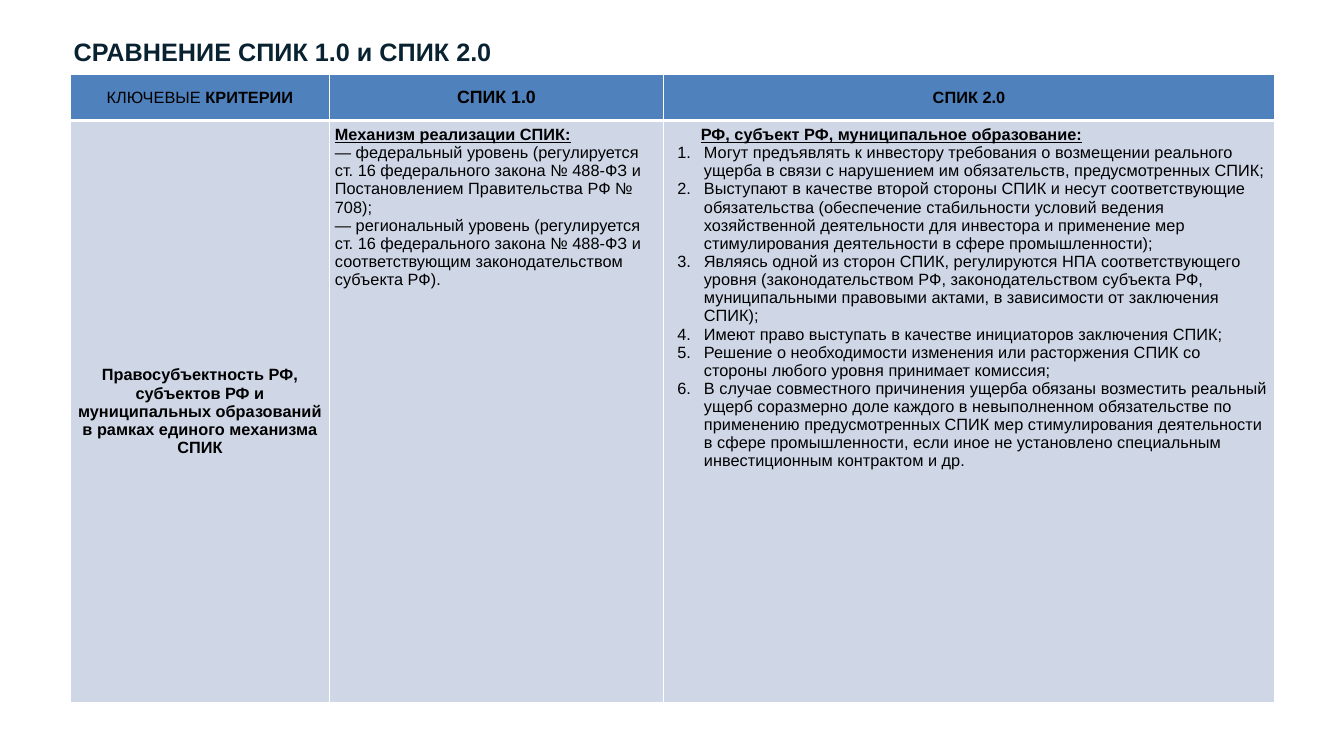
from lxml.etree import SubElement
from pptx import Presentation
from pptx.dml.color import RGBColor
from pptx.enum.text import MSO_ANCHOR as Anchor, MSO_AUTO_SIZE as AutoSize, PP_ALIGN as Align
from pptx.oxml.ns import qn
from pptx.util import Inches, Pt

WIDTH, HEIGHT = 12.6, 7.09
TABLE_LEFT, TABLE_TOP = 0.66, 0.7
COLUMNS = [2.43, 3.13, 5.73]
ROWS = [0.43, 5.46]
FONT = "Arial"
BLACK, WHITE, NAVY = "000000", "FFFFFF", "092231"
HEADER_BLUE, BODY_BLUE = "4F81BD", "CFD7E7"
THIN, THICK = 1, 3

TITLE = "СРАВНЕНИЕ СПИК 1.0 и СПИК 2.0"
CRITERION = ("Правосубъектность РФ, субъектов РФ и муниципальных образований "
             "в рамках единого механизма СПИК")
MECHANISM_HEADING = "Механизм реализации СПИК:"
MECHANISM_LEVELS = [
    "— федеральный уровень (регулируется ст. 16 федерального закона № 488-ФЗ и "
    "Постановлением Правительства РФ № 708);",
    "— региональный уровень (регулируется ст. 16 федерального закона № 488-ФЗ и "
    "соответствующим законодательством субъекта РФ).",
]
PARTIES_HEADING = "РФ, субъект РФ, муниципальное образование:"
PARTIES_RULES = [
    "Могут предъявлять к инвестору требования о возмещении реального ущерба в связи "
    "с нарушением им обязательств, предусмотренных СПИК;",
    "Выступают в качестве второй стороны СПИК и несут соответствующие обязательства "
    "(обеспечение стабильности условий ведения хозяйственной деятельности для инвестора "
    "и применение мер стимулирования деятельности в сфере промышленности);",
    "Являясь одной из сторон СПИК, регулируются НПА соответствующего уровня "
    "(законодательством РФ, законодательством субъекта РФ, муниципальными правовыми "
    "актами, в зависимости от заключения СПИК);",
    "Имеют право выступать в качестве инициаторов заключения СПИК;",
    "Решение о необходимости изменения или расторжения СПИК со стороны любого уровня "
    "принимает комиссия;",
    "В случае совместного причинения ущерба обязаны возместить реальный ущерб соразмерно "
    "доле каждого в невыполненном обязательстве по применению предусмотренных СПИК мер "
    "стимулирования деятельности в сфере промышленности, если иное не установлено "
    "специальным инвестиционным контрактом и др.",
]


def color(hex_value):
    return RGBColor.from_string(hex_value)


def format_runs(paragraph, size=11, bold=False, underline=False, ink=BLACK):
    for run in paragraph.runs:
        font = run.font
        font.name, font.size = FONT, Pt(size)
        font.bold, font.underline = bold, underline
        font.color.rgb = color(ink)


def set_indent(paragraph, left, first=0.0):
    props = paragraph._p.get_or_add_pPr()
    props.set("marL", str(Inches(left)))
    props.set("indent", str(Inches(first)))
    return props


def number_paragraph(paragraph):
    props = set_indent(paragraph, 0.33, -0.25)
    bullet_color = SubElement(props, qn("a:buClr"))
    SubElement(bullet_color, qn("a:srgbClr"), val=BLACK)
    SubElement(props, qn("a:buFont"), typeface="+mj-lt")
    SubElement(props, qn("a:buAutoNum"), type="arabicPeriod")


def style_cell(cell, fill, top, bottom, anchor):
    props = cell._tc.get_or_add_tcPr()
    for side, width in (("L", THIN), ("R", THIN), ("T", top), ("B", bottom)):
        border = SubElement(props, qn(f"a:ln{side}"), w=str(Pt(width)))
        SubElement(SubElement(border, qn("a:solidFill")), qn("a:srgbClr"), val=WHITE)
    cell.fill.solid()
    cell.fill.fore_color.rgb = color(fill)
    cell.vertical_anchor = anchor
    cell.margin_left = cell.margin_right = Inches(0.05)
    cell.margin_top = cell.margin_bottom = Inches(0.05)


def write_centered(cell, text, size=11):
    paragraph = cell.text_frame.paragraphs[0]
    paragraph.text = text
    paragraph.alignment = Align.CENTER
    format_runs(paragraph, size, bold=True)
    return paragraph


def write_section(cell, heading, items):
    cell.text_frame.text = "\n".join([heading, *items])
    heading_line, *item_lines = cell.text_frame.paragraphs
    format_runs(heading_line, bold=True, underline=True)
    for line in item_lines:
        format_runs(line)
    return heading_line, item_lines


def add_title(slide):
    title = slide.shapes.title
    title.left, title.top = Inches(0.69), Inches(0.31)
    title.width, title.height = Inches(4.11), Inches(0.35)
    frame = title.text_frame
    frame.text = TITLE
    frame.margin_left = frame.margin_right = frame.margin_top = frame.margin_bottom = 0
    frame.word_wrap, frame.auto_size = False, AutoSize.NONE
    frame.vertical_anchor = Anchor.MIDDLE
    frame.paragraphs[0].alignment = Align.LEFT
    format_runs(frame.paragraphs[0], 17, bold=True, ink=NAVY)


def add_comparison(slide):
    table = slide.shapes.add_table(
        len(ROWS), len(COLUMNS), Inches(TABLE_LEFT), Inches(TABLE_TOP),
        Inches(sum(COLUMNS)), Inches(sum(ROWS))).table
    for column, width in zip(table.columns, COLUMNS):
        column.width = Inches(width)
    for row, height in zip(table.rows, ROWS):
        row.height = Inches(height)
    criteria_head, first_head, second_head = table.rows[0].cells
    criterion, mechanism, parties = table.rows[1].cells

    # Header row
    for cell in table.rows[0].cells:
        style_cell(cell, HEADER_BLUE, THIN, THICK, Anchor.MIDDLE)
    criteria_line = write_centered(criteria_head, "КЛЮЧЕВЫЕ ")
    criteria_line.add_run().text = "КРИТЕРИИ"
    format_runs(criteria_line, bold=True)
    criteria_line.runs[0].font.bold = False
    write_centered(first_head, "СПИК 1.0", 12)
    write_centered(second_head, "СПИК 2.0")

    # Criterion and its two descriptions
    style_cell(criterion, BODY_BLUE, THICK, THIN, Anchor.MIDDLE)
    for cell in (mechanism, parties):
        style_cell(cell, BODY_BLUE, THICK, THIN, Anchor.TOP)
    write_centered(criterion, CRITERION)
    write_section(mechanism, MECHANISM_HEADING, MECHANISM_LEVELS)
    parties_heading, rules = write_section(parties, PARTIES_HEADING, PARTIES_RULES)
    set_indent(parties_heading, 0.3)
    for rule in rules:
        number_paragraph(rule)


def main():
    deck = Presentation()
    deck.slide_width, deck.slide_height = Inches(WIDTH), Inches(HEIGHT)
    title_only = deck.slide_layouts[5]
    slide = deck.slides.add_slide(title_only)
    add_title(slide)
    add_comparison(slide)
    deck.save("out.pptx")


if __name__ == "__main__":
    main()
